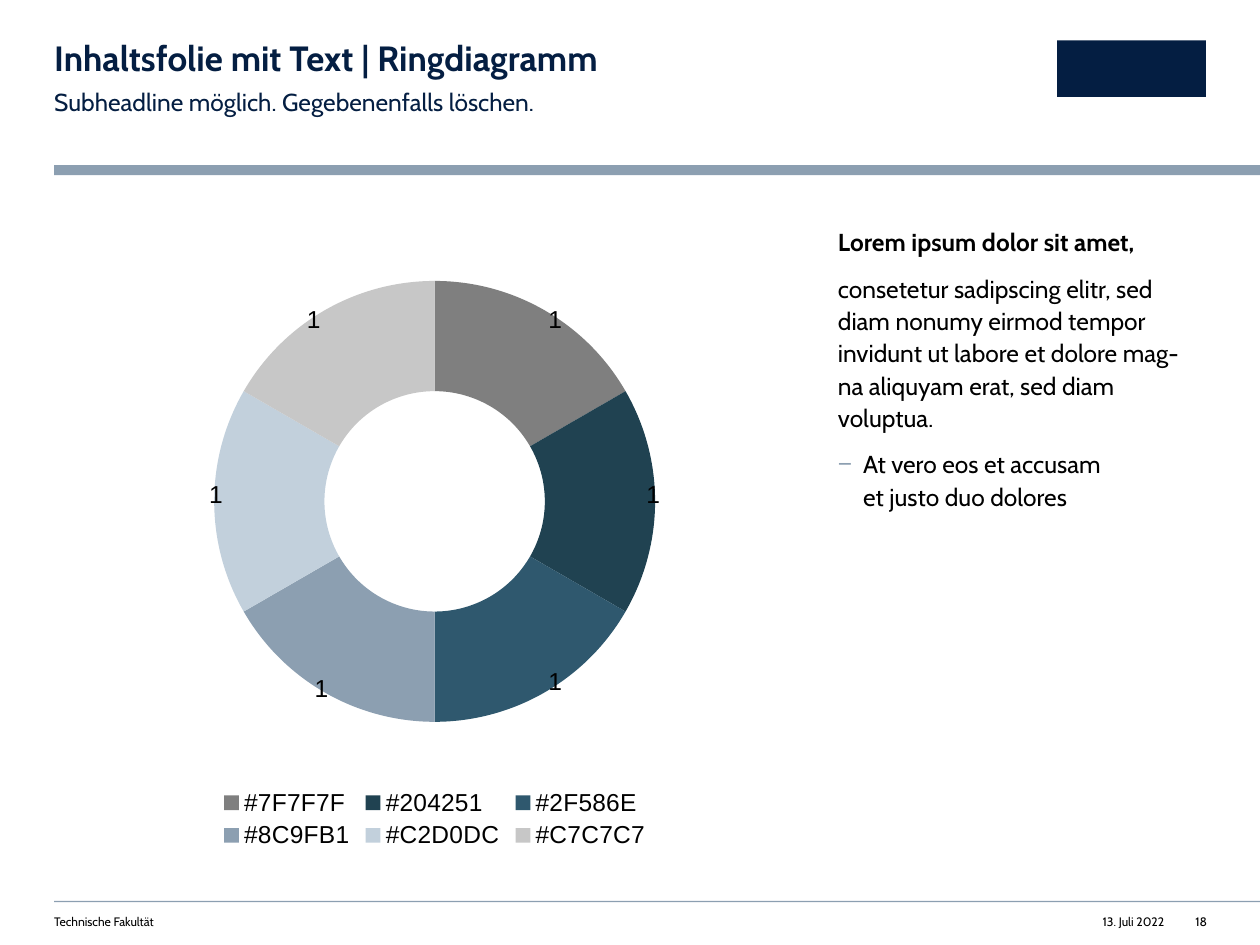
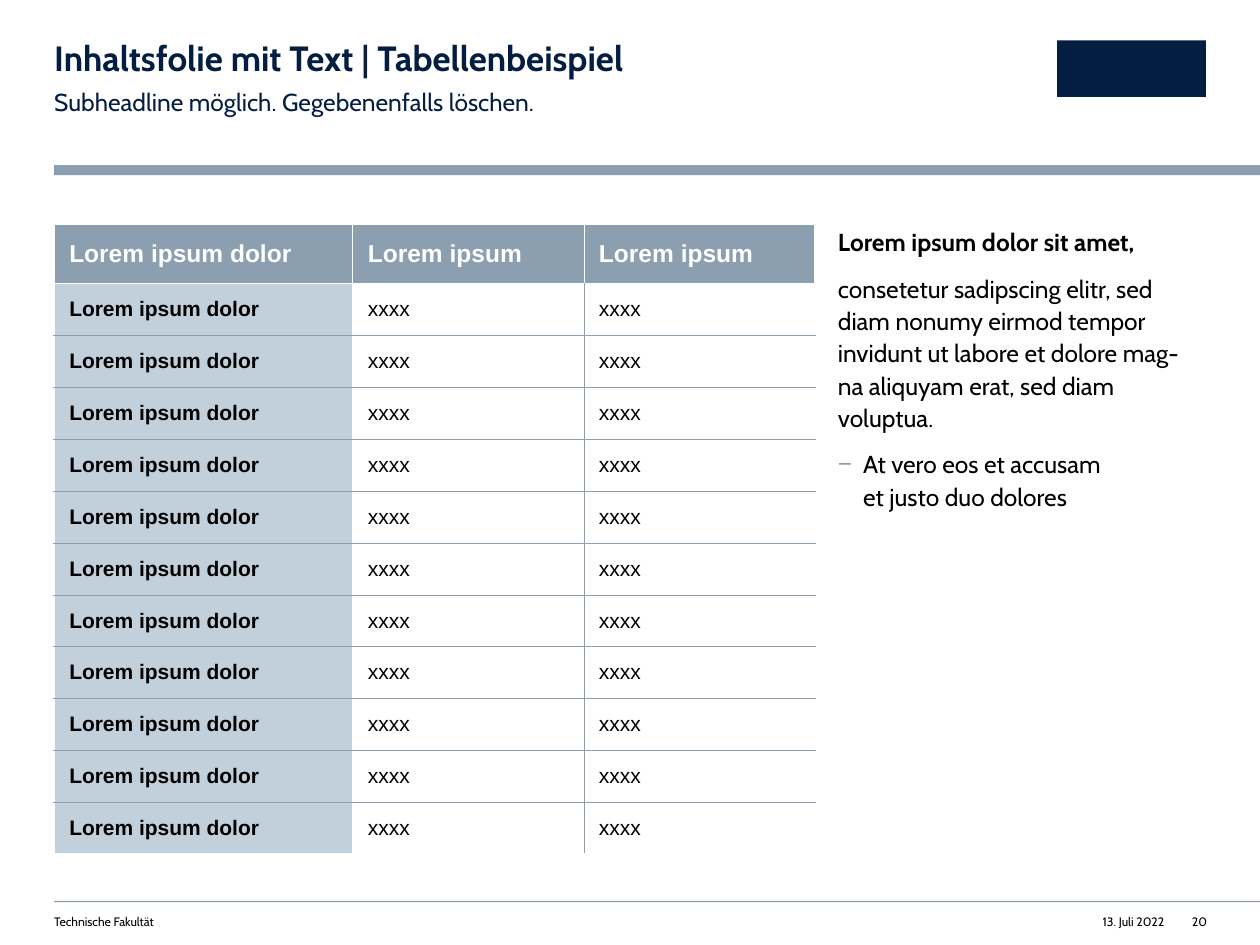
import pptx
import pptx.chart.data
import pptx.dml.color
import pptx.enum.chart
import pptx.enum.shapes
import pptx.enum.text
import pptx.oxml.ns
import pptx.oxml.xmlchemy
import pptx.util

Pt = pptx.util.Pt
qn = pptx.oxml.ns.qn
ALIGN = pptx.enum.text.PP_ALIGN
COLORS = {
    "navy": "041E42", "steel": "8C9FB1", "pale": "C2D0DC", "gray": "7F7F7F",
    "petrol": "204251", "blue": "2F586E", "silver": "C7C7C7",
    "black": "000000", "white": "FFFFFF",
}
COLUMNS, ROWS = 100, 75
LEFT, TOP = 4.3, 17.8
CONTENT = (LEFT, TOP, 60.4, 50)
ASIDE = (66.5, TOP, 29.3, 50)
SUBHEADLINE = "Subheadline möglich. Gegebenenfalls löschen."
ASIDE_TEXT = [
    "Lorem ipsum dolor sit amet,",
    "consetetur sadipscing elitr, sed diam nonumy eirmod tempor invidunt ut labore "
    "et dolore mag-na aliquyam erat, sed diam voluptua.",
    "At vero eos et accusam\net justo duo dolores",
]
RING_COLORS = ["gray", "petrol", "blue", "steel", "pale", "silver"]
LABEL_OFFSETS = [(0.05, -0.06), (0.07, -0.01), (0.05, 0.06),
                 (-0.04, 0.07), (-0.07, -0.01), (-0.05, -0.06)]


def rgb(name):
    return pptx.dml.color.RGBColor.from_string(COLORS[name])


def child(parent, tag, index=None, **attrs):
    el = pptx.oxml.xmlchemy.OxmlElement(tag)
    for key, value in attrs.items():
        el.set(key, str(value))
    parent.insert(len(parent) if index is None else index, el)
    return el


def manual_layout(parent, index, **values):
    for old in parent.findall(qn("c:layout")):
        parent.remove(old)
    manual = child(child(parent, "c:layout", index), "c:manualLayout")
    for tag, value in values.items():
        child(manual, f"c:{tag}", val=value)


class Deck:
    body_font = "Cabin"
    data_font = "Arial"

    def __init__(self):
        self.prs = pptx.Presentation()
        self.prs.slide_width = pptx.util.Inches(10)
        self.prs.slide_height = pptx.util.Inches(7.5)
        self.s = None

    def x(self, columns):
        return round(self.prs.slide_width * columns / COLUMNS)

    def y(self, rows):
        return round(self.prs.slide_height * rows / ROWS)

    def box(self, left, top, width, height):
        return self.x(left), self.y(top), self.x(width), self.y(height)

    def font(self, font, size, color="black", bold=False, name=None):
        font.name, font.size, font.bold = name or self.body_font, Pt(size), bold
        font.color.rgb = rgb(color)

    def frame(self, sp, right=0):
        tf = sp.text_frame
        tf.margin_left = tf.margin_top = tf.margin_bottom = 0
        tf.margin_right = self.x(right)
        tf.auto_size = pptx.enum.text.MSO_AUTO_SIZE.NONE
        tf.vertical_anchor = pptx.enum.text.MSO_ANCHOR.TOP
        return tf

    def placeholder(self, index, at, texts, right=0, spacing=1.1, after=8):
        sp = self.s.placeholders[index]
        sp.left, sp.top, sp.width, sp.height = self.box(*at)
        tf = self.frame(sp, right)
        for i, text in enumerate(texts):
            p = tf.paragraphs[0] if i == 0 else tf.add_paragraph()
            p.text = text
            p.alignment = ALIGN.LEFT
            p.line_spacing, p.space_before, p.space_after = spacing, Pt(0), Pt(after)
            self.bullet(p, 0)
        return tf.paragraphs

    def bullet(self, p, indent, char=None):
        pPr = p._p.get_or_add_pPr()
        pPr.set("marL", str(self.x(indent)))
        pPr.set("indent", str(-self.x(indent)))
        for old in pPr.findall(qn("a:buNone")):
            pPr.remove(old)
        if char:
            child(child(pPr, "a:buClr"), "a:srgbClr", val=COLORS["steel"])
            child(pPr, "a:buChar", char=char)
        else:
            child(pPr, "a:buNone")

    def bar(self, at, color):
        sp = self.s.shapes.add_shape(pptx.enum.shapes.MSO_SHAPE.RECTANGLE, *self.box(*at))
        sp.shadow.inherit = False
        sp.fill.solid()
        sp.fill.fore_color.rgb = rgb(color)
        sp.line.fill.background()

    def footer(self, left, width, text, align=ALIGN.LEFT):
        sp = self.s.shapes.add_textbox(*self.box(left, 72.6, width, 1.2))
        p = self.frame(sp).paragraphs[0]
        p.text, p.alignment = text, align
        self.font(p.font, 7)

    def slide(self, title, number):
        self.s = self.prs.slides.add_slide(self.prs.slide_layouts[3])
        self.bar((LEFT, 13.1, COLUMNS - LEFT, 0.8), "steel")
        self.bar((LEFT, 71.5, COLUMNS - LEFT, 0.1), "steel")
        self.bar((83.9, 3.2, 11.8, 4.5), "navy")
        self.footer(LEFT, 44.9, "Technische Fakultät")
        self.footer(86.5, 5.9, "13. Juli 2022", ALIGN.RIGHT)
        self.footer(93.8, 2, number, ALIGN.RIGHT)
        head, = self.placeholder(0, (LEFT, 3.3, 56.1, 3), [title], spacing=0.9, after=0)
        self.font(head.font, 20, "navy", True)
        sub, = self.placeholder(1, (LEFT, 6.7, 56.1, 2.4), [SUBHEADLINE], right=3.9)
        self.font(sub.font, 14, "navy")
        aside = self.placeholder(2, ASIDE, ASIDE_TEXT, right=2)
        aside[-1].level = 1
        self.bullet(aside[-1], 2, "−")
        for i, p in enumerate(aside):
            self.font(p.font, 14, bold=i == 0)

    def ring_chart(self, at, colors, offsets):
        data = pptx.chart.data.CategoryChartData()
        data.categories = ["#" + COLORS[c] for c in colors]
        data.add_series("Series 1", [1] * len(colors))
        chart = self.s.shapes.add_chart(
            pptx.enum.chart.XL_CHART_TYPE.DOUGHNUT, *self.box(*at), data).chart
        self.font(chart.font, 10, name=self.data_font)
        chart.has_title = False
        chart.has_legend = True
        chart.legend.position = pptx.enum.chart.XL_LEGEND_POSITION.BOTTOM
        chart.legend.include_in_layout = False
        self.font(chart.legend.font, 14, name=self.data_font)
        plot = chart.plots[0]
        plot.vary_by_categories = True
        plot.has_data_labels = True
        plot.data_labels.show_value = True
        plot.data_labels.show_percentage = False
        self.font(plot.data_labels.font, 14, name=self.data_font)
        for i, color in enumerate(colors):
            point = plot.series[0].points[i]
            point.format.fill.solid()
            point.format.fill.fore_color.rgb = rgb(color)
            self.font(point.data_label.font, 14, name=self.data_font)
        root = chart._chartSpace
        for label, (dx, dy) in zip(root.iter(qn("c:dLbl")), offsets):
            manual_layout(label, 1, x=dx, y=dy)
        for hole in root.iter(qn("c:holeSize")):
            hole.set("val", "80")
        manual_layout(root.find(".//" + qn("c:plotArea")), 0, layoutTarget="inner",
                      xMode="edge", yMode="edge", x=0.11, y=0.09, w=0.78, h=0.7)

    def border(self, cell, side, color, width):
        ln = child(cell._tc.get_or_add_tcPr(), f"a:ln{side}", w=Pt(width))
        child(child(ln, "a:solidFill"), "a:srgbClr", val=COLORS[color])

    def cell(self, cell, text, size, color, fill, bold, borders):
        cell.text = text
        cell.margin_left = cell.margin_right = self.x(1.2)
        cell.margin_top = cell.margin_bottom = self.y(0.4)
        cell.vertical_anchor = pptx.enum.text.MSO_ANCHOR.MIDDLE
        for side, line in borders.items():
            self.border(cell, side, *line)
        cell.fill.solid()
        cell.fill.fore_color.rgb = rgb(fill)
        self.font(cell.text_frame.paragraphs[0].font, size, color, bold, self.data_font)

    def table(self, at, header, rows, widths, header_height):
        table = self.s.shapes.add_table(len(rows) + 1, len(header), *self.box(*at)).table
        table.first_row = table.horz_banding = False
        for column, width in zip(table.columns, widths):
            column.width = self.x(width)
        for row in table.rows:
            row.height = self.y((at[3] - header_height) / len(rows))
        table.rows[0].height = self.y(header_height)
        thin, gap, edge = ("steel", 0.25), ("white", 0.5), ("white", 1)
        last = len(header) - 1
        for c, text in enumerate(header):
            self.cell(table.cell(0, c), text, 14, "white", "steel", True,
                      {"L": gap if c else edge, "R": gap if c < last else edge, "T": edge})
        for r, texts in enumerate(rows, 1):
            for c, text in enumerate(texts):
                borders = {"L": thin if c == last else edge,
                           "R": thin if 0 < c < last else edge}
                if r > 1:
                    borders["T"] = thin
                if r < len(rows):
                    borders["B"] = thin
                self.cell(table.cell(r, c), text, 12, "black",
                          "white" if c else "pale", c == 0, borders)


def main():
    deck = Deck()
    deck.slide("Inhaltsfolie mit Text | Ringdiagramm", "18")
    deck.ring_chart(CONTENT, RING_COLORS, LABEL_OFFSETS)
    deck.slide("Inhaltsfolie mit Text | Tabellenbeispiel", "20")
    deck.table(CONTENT, ["Lorem ipsum dolor", "Lorem ipsum", "Lorem ipsum"],
               [["Lorem ipsum dolor", "xxxx", "xxxx"]] * 11, [23.7, 18.35, 18.35], 4.7)
    deck.prs.save("out.pptx")


if __name__ == "__main__":
    main()
